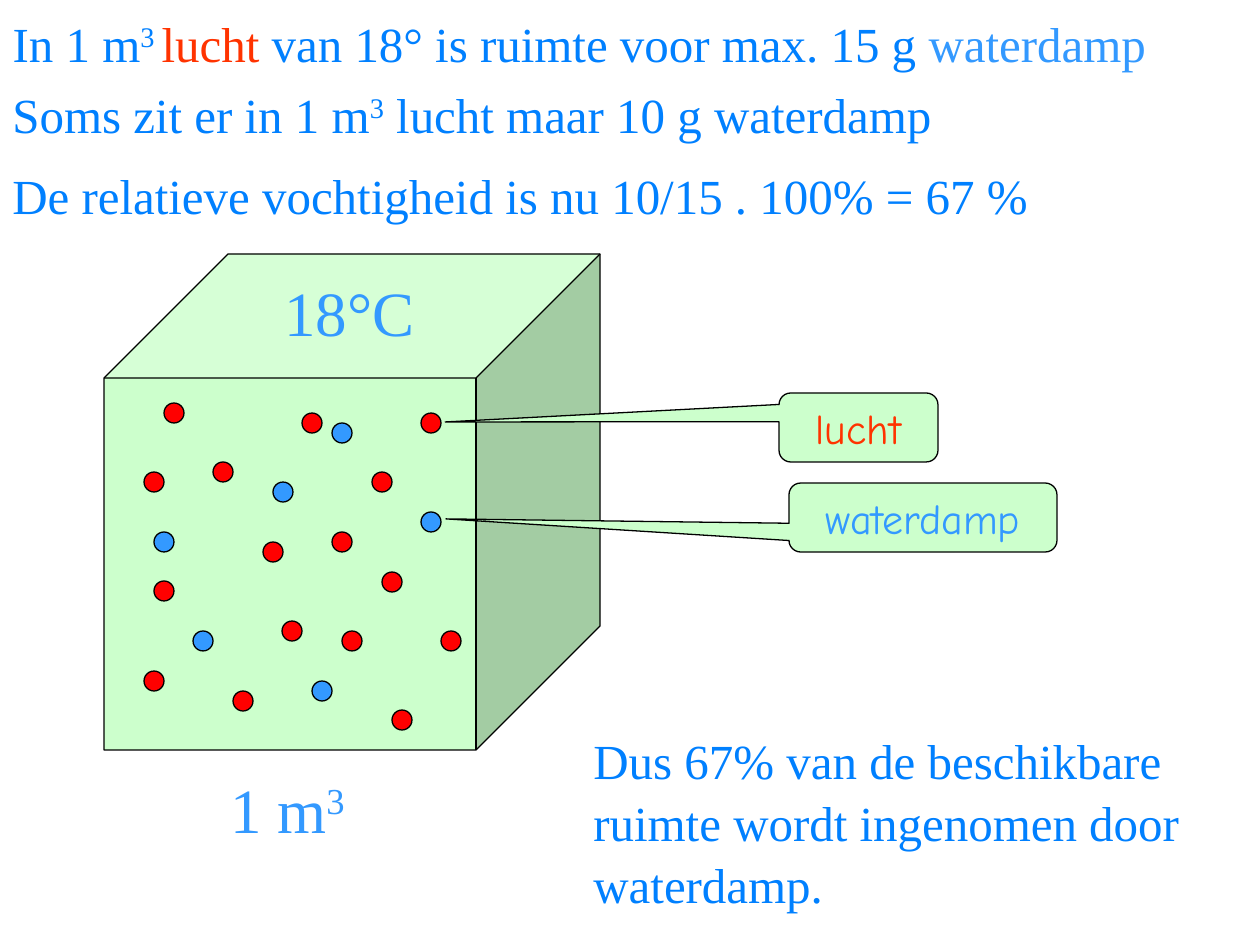
"""Build a slide on relative humidity in a cubic metre of air."""
from pptx import Presentation
from pptx.dml.color import RGBColor
from pptx.enum.shapes import MSO_SHAPE as Shape
from pptx.enum.text import MSO_ANCHOR as Anchor, MSO_AUTO_SIZE as Auto, PP_ALIGN as Align
from pptx.util import Emu, Pt

SCALE = 914400 / 126
HEX = {"text": "0080FF", "sky": "3399FF", "warm": "FF3300",
       "red": "FF0000", "mint": "CCFFCC", "black": "000000"}
SERIF, COMIC = "Times New Roman", "Comic Neue"

TITLE = [("In 1 m", "text", 0), ("3 ", "text", 30), ("lucht", "warm", 0),
         (" van 18° is ruimte voor max. 15 g ", "text", 0), ("waterdamp", "sky", 0)]
NOTES = [
    ((0, 74, 1260, 80), [("Soms zit er in 1 m", "text", 0), ("3", "text", 30),
                         (" lucht maar 10 g waterdamp", "text", 0)], {}),
    ((0, 155, 1260, 79),
     [("De relatieve vochtigheid is nu 10/15 . 100% = 67 %", "text", 0)], {}),
    ((581, 731, 650, 179),
     [("Dus 67% van de beschikbare ruimte wordt ingenomen door waterdamp.", "text", 0)],
     {"space": 1.05}),
    ((104, 760, 367, 96), [("1 m", "sky", 0), ("3", "sky", 30)],
     {"size": 36, "align": Align.CENTER}),
    ((272, 267, 155, 88), [("18°C", "sky", 0)],
     {"size": 36, "anchor": Anchor.TOP, "wrap": False, "auto": Auto.SHAPE_TO_FIT_TEXT}),
]
CUBE = (104, 254, 496, 496)
DOT = 20
DOTS = {
    "red": [(174, 413), (312, 423), (431, 423), (154, 482), (223, 472), (382, 482),
            (273, 552), (342, 542), (392, 582), (164, 591), (292, 631), (352, 641),
            (451, 641), (154, 681), (243, 701), (402, 720)],
    "sky": [(342, 433), (283, 492), (431, 522), (164, 542), (203, 641), (322, 691)],
}
CALLS = [("lucht", "warm", (779, 393, 159, 69), (-2.6, -0.08, 0.17)),
         ("waterdamp", "sky", (789, 483, 268, 69), (-1.78, 0.02, 0.17))]


def emu(box):
    return [Emu(round(v * SCALE)) for v in box]


def color(name):
    return RGBColor.from_string(HEX[name])


def write(frame, runs, size=28, font=SERIF, align=Align.LEFT, anchor=Anchor.MIDDLE,
          wrap=True, auto=Auto.NONE, space=None):
    frame.word_wrap = wrap
    frame.auto_size = auto
    frame.vertical_anchor = anchor
    para = frame.paragraphs[0]
    para.alignment = align
    if space:
        para.line_spacing = space
    for text, ink, base in runs:
        run = para.add_run()
        run.text = text
        run.font.size, run.font.name = Pt(size), font
        run.font.color.rgb = color(ink)
        if base:
            run.font._element.set("baseline", str(base * 1000))


def draw(slide, kind, box, fill, adjust=()):
    shape = slide.shapes.add_shape(kind, *emu(box))
    shape.shadow.inherit = False
    shape.fill.solid()
    shape.fill.fore_color.rgb = color(fill)
    shape.line.color.rgb = color("black")
    shape.line.width = Pt(0.75)
    for i, value in enumerate(adjust):
        shape.adjustments[i] = value
    return shape


def main():
    deck = Presentation()
    deck.slide_width, deck.slide_height = emu((1260, 945))
    slide = deck.slides.add_slide(deck.slide_layouts[5])
    title = slide.shapes.title
    title.left, title.top, title.width, title.height = emu((0, 0, 1260, 86))
    write(title.text_frame, TITLE)
    draw(slide, Shape.CUBE, CUBE, "mint", (0.25,))
    for fill, spots in DOTS.items():
        for x, y in spots:
            draw(slide, Shape.OVAL, (x - DOT / 2, y - DOT / 2, DOT, DOT), fill)
    for box, runs, style in NOTES:
        write(slide.shapes.add_textbox(*emu(box)).text_frame, runs, **style)
    for text, ink, box, adjust in CALLS:
        call = draw(slide, Shape.ROUNDED_RECTANGULAR_CALLOUT, box, "mint", adjust)
        write(call.text_frame, [(text, ink, 0)], size=24, font=COMIC,
              align=Align.CENTER, anchor=Anchor.TOP)
    deck.save("out.pptx")


if __name__ == "__main__":
    main()
